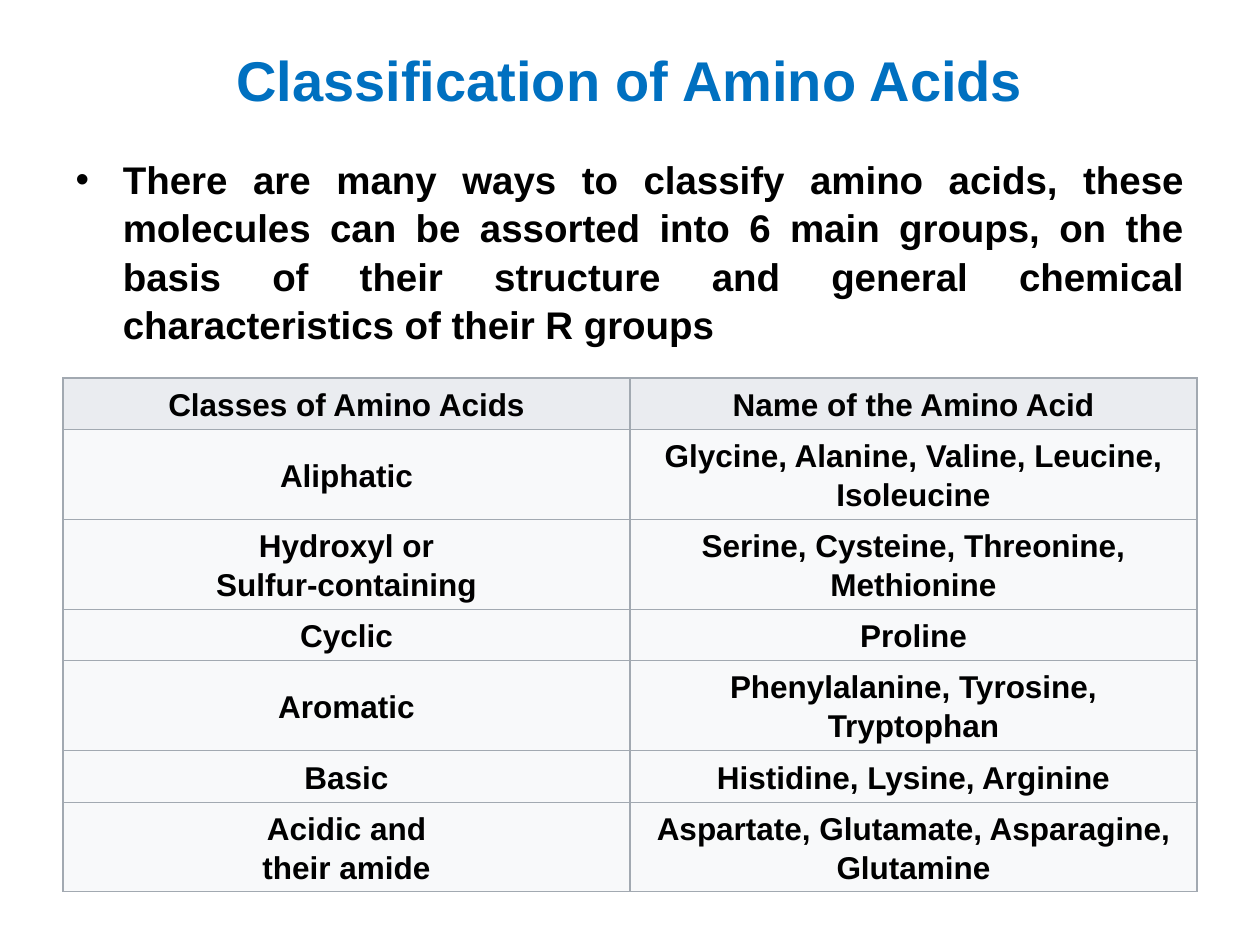
from lxml import etree
from pptx import Presentation
from pptx.dml.color import RGBColor
from pptx.enum.text import MSO_ANCHOR, PP_ALIGN
from pptx.oxml.ns import qn
from pptx.util import Cm, Pt

COLORS = {
    "title": "0070C0",
    "text": "000000",
    "header": "EAECF0",
    "row": "F8F9FA",
    "border": "A2A9B1",
}

INTRODUCTION = (
    "There are many ways to classify amino acids, these molecules can be "
    "assorted into 6 main groups, on the basis of their structure and general "
    "chemical characteristics of their R groups"
)

LOW_ROW, HIGH_ROW = Cm(1.04), Cm(1.81)

ROWS = [
    (LOW_ROW, "Classes of Amino Acids", "Name of the Amino Acid"),
    (HIGH_ROW, "Aliphatic", "Glycine, Alanine, Valine, Leucine, Isoleucine"),
    (HIGH_ROW, "Hydroxyl or\nSulfur-containing", "Serine, Cysteine, Threonine, Methionine"),
    (LOW_ROW, "Cyclic", "Proline"),
    (HIGH_ROW, "Aromatic", "Phenylalanine, Tyrosine, Tryptophan"),
    (LOW_ROW, "Basic", "Histidine, Lysine, Arginine"),
    (HIGH_ROW, "Acidic and\ntheir amide", "Aspartate, Glutamate, Asparagine, Glutamine"),
]


class SlideBuilder:
    font_name = "Arial"
    left, width = Cm(1.27), Cm(22.86)

    def __init__(self, slide):
        self.slide = slide

    def fill_paragraph(self, paragraph, text, size, color, alignment):
        paragraph.text = text
        paragraph.alignment = alignment
        for run in paragraph.runs:
            run.font.name = self.font_name
            run.font.size = Pt(size)
            run.font.bold = True
            run.font.color.rgb = RGBColor.from_string(COLORS[color])

    def place(self, shape, top, height):
        shape.left, shape.top = self.left, top
        shape.width, shape.height = self.width, height

    def title(self, text):
        shape = self.slide.shapes.title
        self.place(shape, Cm(0), Cm(3.18))
        shape.text_frame.vertical_anchor = MSO_ANCHOR.MIDDLE
        paragraph = shape.text_frame.paragraphs[0]
        self.fill_paragraph(paragraph, text, 32, "title", PP_ALIGN.CENTER)

    def body(self, text):
        shape = self.slide.placeholders[1]
        self.place(shape, Cm(2.97), Cm(12.57))
        paragraph = shape.text_frame.paragraphs[0]
        self.fill_paragraph(paragraph, text, 22, "text", PP_ALIGN.JUSTIFY)
        paragraph.line_spacing = 1.05

    def table(self, rows, top):
        height = sum(row[0] for row in rows)
        table = self.slide.shapes.add_table(
            len(rows), 2, self.left, top, self.width, height
        ).table
        for row_index, (row_height, *texts) in enumerate(rows):
            table.rows[row_index].height = row_height
            fill = "row" if row_index else "header"
            for column_index, text in enumerate(texts):
                self.cell(table.cell(row_index, column_index), text, fill)

    def cell(self, cell, text, fill):
        cell.margin_top = cell.margin_bottom = 0
        cell.vertical_anchor = MSO_ANCHOR.MIDDLE
        paragraph = cell.text_frame.paragraphs[0]
        self.fill_paragraph(paragraph, text, 18, "text", PP_ALIGN.CENTER)
        paragraph.line_spacing = 1.1
        paragraph.space_before = paragraph.space_after = Pt(6)
        self.borders(cell)
        cell.fill.solid()
        cell.fill.fore_color.rgb = RGBColor.from_string(COLORS[fill])

    def borders(self, cell):
        properties = cell._tc.get_or_add_tcPr()
        for side in ("a:lnL", "a:lnR", "a:lnT", "a:lnB"):
            line = etree.SubElement(properties, qn(side), w=str(Pt(0.75)))
            fill = etree.SubElement(line, qn("a:solidFill"))
            etree.SubElement(fill, qn("a:srgbClr"), val=COLORS["border"])


def main():
    presentation = Presentation()
    presentation.slide_width, presentation.slide_height = Cm(25.4), Cm(19.05)
    slide = presentation.slides.add_slide(presentation.slide_layouts[1])

    builder = SlideBuilder(slide)
    builder.title("Classification of Amino Acids")
    builder.body(INTRODUCTION)
    builder.table(ROWS, Cm(7.62))

    presentation.save("out.pptx")


if __name__ == "__main__":
    main()
